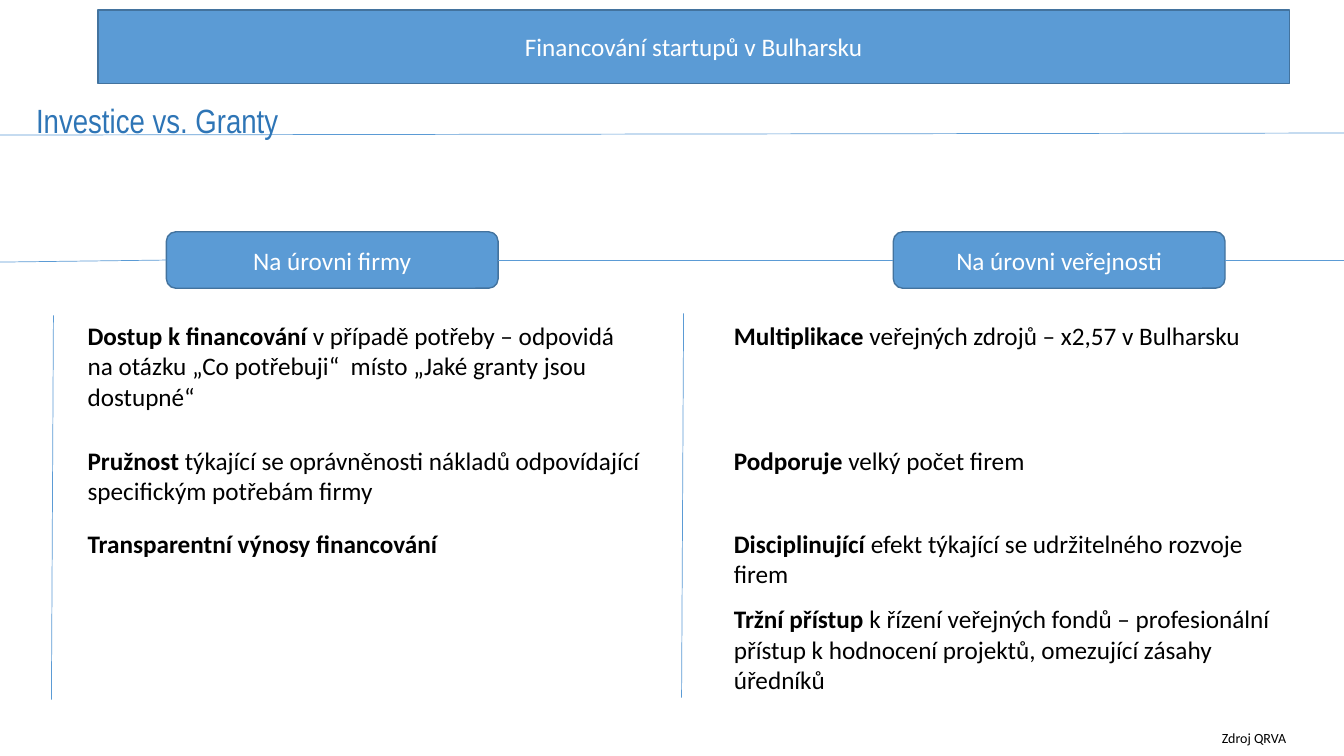
from collections import namedtuple
from dataclasses import dataclass

from lxml.etree import SubElement
from pptx import Presentation
from pptx.dml.color import RGBColor
from pptx.enum.shapes import MSO_CONNECTOR as Connector, MSO_SHAPE as Shape
from pptx.enum.text import MSO_ANCHOR as Anchor, MSO_AUTO_SIZE as AutoSize, PP_ALIGN as Align
from pptx.oxml.ns import qn
from pptx.util import Pt

PX = 9144  # 100 px to the inch
PAGE_WIDTH, PAGE_HEIGHT = 1333, 750
TOP, LEFT, BOTTOM, RIGHT = range(4)

Box = namedtuple("Box", "left top width height")


@dataclass(frozen=True)
class Theme:
    fill: RGBColor = RGBColor(0x5B, 0x9B, 0xD5)
    outline: RGBColor = RGBColor(0x43, 0x73, 0x9E)
    heading: RGBColor = RGBColor(0x2E, 0x75, 0xB6)
    light: RGBColor = RGBColor(0xFF, 0xFF, 0xFF)
    dark: RGBColor = RGBColor(0, 0, 0)
    body_font: str = "Calibri"
    heading_font: str = "Arial Narrow"
    heading_size: int = 24
    body_size: int = 18
    source_size: int = 10
    outline_width: float = 1
    rule_width: float = 0.5


THEME = Theme()

FIRM_POINTS = [
    ("Dostup k financování ",
     "v případě potřeby – odpovidá na otázku „Co potřebuji“  místo „Jaké granty jsou dostupné“", 3),
    ("Pružnost ", "týkající se oprávněnosti nákladů odpovídající specifickým potřebám firmy", 2),
    ("Transparentní výnosy financování", "", 1),
]
PUBLIC_POINTS = [
    ("Multiplikace ", "veřejných zdrojů – x2,57 v Bulharsku", 1),
    ("Podporuje ", "velký počet firem", 1),
    ("Disciplinující ", "efekt týkající se udržitelného rozvoje firem", 2),
    ("Tržní přístup ",
     "k řízení veřejných fondů – profesionální přístup k hodnocení projektů, omezující zásahy úředníků", 3),
]
ROW_OFFSETS = [0, 124, 206, 281]


def to_emu(box):
    return [length * PX for length in box]


def add_span(para, text, size, color, font=THEME.body_font, bold=False):
    span = para.add_run()
    span.text = text
    span.font.name = font
    span.font.size = Pt(size)
    span.font.bold = bold
    span.font.color.rgb = color


def add_banner(page, box, text, kind):
    banner = page.shapes.add_shape(kind, *to_emu(box))
    banner.shadow.inherit = False
    banner.fill.solid()
    banner.fill.fore_color.rgb = THEME.fill
    banner.line.color.rgb = THEME.outline
    banner.line.width = Pt(THEME.outline_width)
    banner.text_frame.vertical_anchor = Anchor.MIDDLE
    para = banner.text_frame.paragraphs[0]
    para.alignment = Align.CENTER
    add_span(para, text, THEME.body_size, THEME.light)
    return banner


def add_text(page, box):
    """Add an empty wrapping text box and return its first paragraph."""
    frame = page.shapes.add_textbox(*to_emu(box)).text_frame
    frame.word_wrap = True
    frame.auto_size = AutoSize.SHAPE_TO_FIT_TEXT
    return frame.paragraphs[0]


def add_rule(page, start, end):
    rule = page.shapes.add_connector(Connector.STRAIGHT, *to_emu(start + end))
    rule.line.color.rgb = THEME.fill
    rule.line.width = Pt(THEME.rule_width)
    SubElement(rule._element.spPr, qn("a:effectLst"))
    return rule


def add_header(page, box):
    add_banner(page, Box(box.left + 97, box.top + 10, 1182, 73),
               "Financování startupů v Bulharsku", Shape.RECTANGLE)
    add_rule(page, (box.left, box.top + 134), (box.left + box.width, box.top + 132))
    para = add_text(page, Box(box.left + 26, box.top + 94, 346, 50))
    add_span(para, "Investice vs. Granty", THEME.heading_size, THEME.heading, THEME.heading_font)


def add_level_band(page, box):
    """Place the two level labels, threaded on a line across the page."""
    firm, public = [
        add_banner(page, Box(box.left + offset, box.top, 329, box.height), text, Shape.ROUNDED_RECTANGLE)
        for offset, text in ((165, "Na úrovni firmy"), (886, "Na úrovni veřejnosti"))
    ]
    middle = box.top + box.height // 2
    right = box.left + box.width
    add_rule(page, (box.left + 165, middle), (box.left, middle + 2)).begin_connect(firm, LEFT)
    link = add_rule(page, (box.left + 494, middle), (box.left + 886, middle))
    link.begin_connect(firm, RIGHT)
    link.end_connect(public, LEFT)
    add_rule(page, (box.left + 1215, middle), (right, middle)).begin_connect(public, RIGHT)


def add_points(page, box, text_left, text_top, points):
    """Draw the slightly leaning rule and, right of it, one text per row."""
    add_rule(page, (box.left + 2, box.top), (box.left, box.top + box.height))
    for offset, (lead, rest, lines) in zip(ROW_OFFSETS, points):
        para = add_text(page, Box(box.left + text_left, box.top + text_top + offset,
                                  572, 10 + 30 * lines))
        add_span(para, lead, THEME.body_size, THEME.dark, bold=True)
        if rest:
            add_span(para, rest, THEME.body_size, THEME.dark)


def add_source(page, box):
    add_span(add_text(page, box), "Zdroj QRVA", THEME.source_size, THEME.dark)


def main():
    deck = Presentation()
    deck.slide_width, deck.slide_height = PAGE_WIDTH * PX, PAGE_HEIGHT * PX
    page = deck.slides.add_slide(deck.slide_layouts[6])
    add_header(page, Box(0, 0, PAGE_WIDTH, 144))
    add_level_band(page, Box(0, 230, PAGE_WIDTH, 56))
    add_points(page, Box(51, 313, 598, 381), 26, 0, FIRM_POINTS)
    add_points(page, Box(676, 311, 614, 381), 42, 2, PUBLIC_POINTS)
    add_source(page, Box(1202, 719, 90, 27))
    deck.save("out.pptx")


if __name__ == "__main__":
    main()
